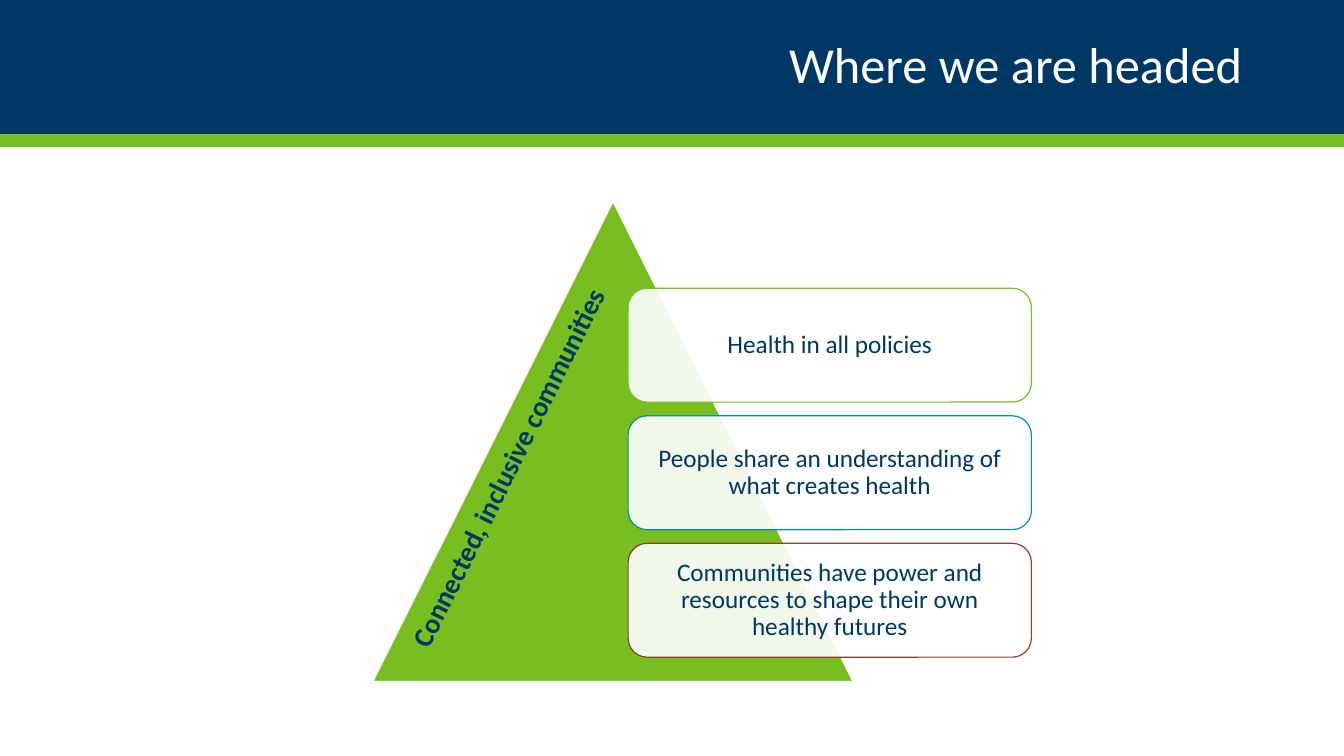
from lxml import etree
from pptx import Presentation
from pptx.dml.color import RGBColor
from pptx.enum import shapes, text
from pptx.oxml.ns import qn
from pptx.util import Inches, Pt

COLORS = {
    "navy": "003865",
    "green": "78BE21",
    "teal": "008EAA",
    "rust": "8D3F2B",
    "white": "FFFFFF",
}
TITLE = "Where we are headed"
VISION = "Connected, inclusive communities"
GOALS = [
    ("Health in all policies", "green"),
    ("People share an understanding of what creates health", "teal"),
    ("Communities have power and resources to shape their own healthy futures", "rust"),
]

SLIDE_W, SLIDE_H = 13.33, 7.5
HEADER_H, STRIPE_H = 1.33, 0.13
PYRAMID = (3.7, 2, 4.76, 4.76)
GOAL_LEFT, GOAL_TOP, GOAL_W, GOAL_H = 6.23, 2.86, 4, 1.13
GOAL_STEP = 1.265
LINE_WIDTH = 0.85

deck = Presentation()
deck.slide_width, deck.slide_height = Inches(SLIDE_W), Inches(SLIDE_H)
slide = deck.slides.add_slide(deck.slide_layouts[6])


def rgb(name):
    return RGBColor.from_string(COLORS[name])


def add_figure(preset, box, fill, line=None, opacity=100):
    figure = slide.shapes.add_shape(preset, *map(Inches, box))
    figure.shadow.inherit = False
    figure.fill.solid()
    figure.fill.fore_color.rgb = rgb(fill)
    if opacity < 100:
        color = figure.fill._xPr.find(qn("a:solidFill"))[0]
        etree.SubElement(color, qn("a:alpha"), val=str(opacity * 1000))
    if line:
        figure.line.color.rgb = rgb(line)
        figure.line.width = Pt(LINE_WIDTH)
    else:
        figure.line.fill.background()
    return figure


def write(holder, words, size, color="navy", bold=False, align="LEFT",
          anchor="MIDDLE", spacing=None, insets=None, wrap=True):
    frame = holder.text_frame
    frame.word_wrap = wrap
    frame.vertical_anchor = text.MSO_ANCHOR[anchor]
    if insets is not None:
        frame.margin_left = frame.margin_right = Inches(insets)
        frame.margin_top = frame.margin_bottom = Inches(insets)
    paragraph = frame.paragraphs[0]
    paragraph.alignment = text.PP_ALIGN[align]
    paragraph.line_spacing = spacing
    run = paragraph.add_run()
    run.text = words
    run.font.name = "Calibri"
    run.font.size = Pt(size)
    run.font.bold = bold
    run.font.color.rgb = rgb(color)


def add_label(box, words, size, **style):
    label = slide.shapes.add_textbox(*map(Inches, box))
    write(label, words, size, **style)
    return label


preset = shapes.MSO_SHAPE
add_figure(preset.RECTANGLE, (0, 0, SLIDE_W, HEADER_H), "navy")
add_figure(preset.RECTANGLE, (0, HEADER_H, SLIDE_W, STRIPE_H), "green")
add_label((0.92, 0.17, 11.5, 1), TITLE, 36, color="white", align="RIGHT", spacing=0.9)

add_figure(preset.ISOSCELES_TRIANGLE, PYRAMID, "green", line="white")
for row, (goal, outline) in enumerate(GOALS):
    goal_box = (GOAL_LEFT, GOAL_TOP + row * GOAL_STEP, GOAL_W, GOAL_H)
    card = add_figure(preset.ROUNDED_RECTANGLE, goal_box, "white", line=outline, opacity=90)
    write(card, goal, 18, align="CENTER", spacing=0.9, insets=0.07)

vision = add_label((2.96, 4.4, 4.17, 0.44), VISION, 20, bold=True, anchor="TOP", wrap=False)
vision.text_frame.auto_size = text.MSO_AUTO_SIZE.SHAPE_TO_FIT_TEXT
vision.rotation = 296.5

deck.save("out.pptx")
